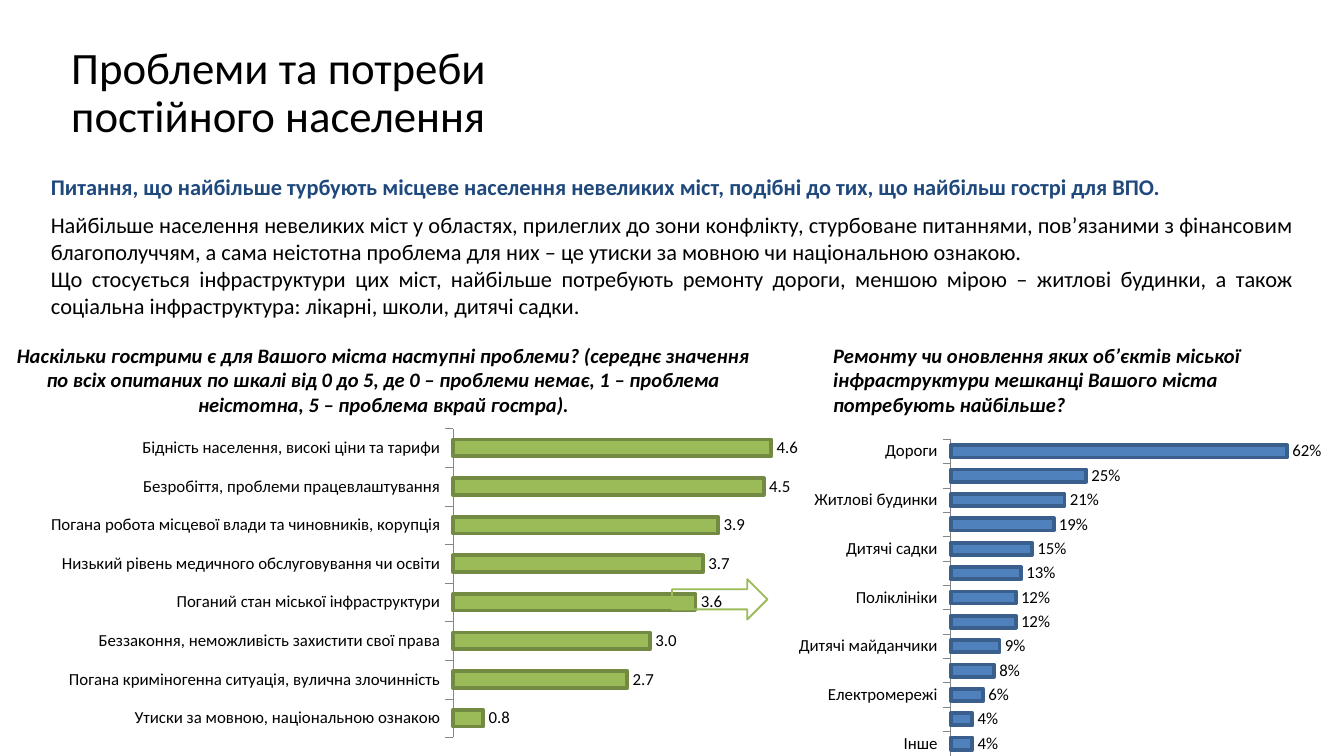
import pptx
import pptx.chart.data
import pptx.dml.color
import pptx.enum.chart
import pptx.enum.shapes
import pptx.enum.text
import pptx.oxml
import pptx.oxml.ns
import pptx.util

Inches, Pt = pptx.util.Inches, pptx.util.Pt
RGBColor = pptx.dml.color.RGBColor
Align = pptx.enum.text.PP_ALIGN

BLACK = RGBColor(0, 0, 0)
NAVY = RGBColor(0x1F, 0x49, 0x7D)
GREEN = RGBColor(0x9B, 0xBB, 0x59)
OLIVE = RGBColor(0x73, 0x8A, 0x42)
BLUE = RGBColor(0x4F, 0x81, 0xBD)
STEEL = RGBColor(0x3A, 0x5F, 0x8C)
GRAY = RGBColor(0x86, 0x86, 0x86)
FACE = "Calibri"

ISSUES = {
    "Бідність населення, високі ціни та тарифи": 4.6,
    "Безробіття, проблеми працевлаштування": 4.5,
    "Погана робота місцевої влади та чиновників, корупція": 3.9,
    "Низький рівень медичного обслуговування чи освіти": 3.7,
    "Поганий стан міської інфраструктури": 3.6,
    "Беззаконня, неможливість захистити свої права": 3.0,
    "Погана криміногенна ситуація, вулична злочинність": 2.7,
    "Утиски за мовною, національною ознакою": 0.8,
}
REPAIRS = {
    "Дороги": 0.62,
    "Лікарні": 0.25,
    "Житлові будинки": 0.21,
    "Школи": 0.19,
    "Дитячі садки": 0.15,
    "Водогін": 0.13,
    "Поліклініки": 0.12,
    "Громадський транспорт": 0.12,
    "Дитячі майданчики": 0.09,
    "Система централізованого опалення": 0.08,
    "Електромережі": 0.06,
    "Газопровід": 0.04,
    "Інше": 0.04,
}
TITLE = "Проблеми та потреби \vпостійного населення"
LEAD = ("Питання, що найбільше турбують місцеве населення невеликих міст, "
        "подібні до тих, що найбільш гострі для ВПО.")
MONEY = ("Найбільше населення невеликих міст у областях, прилеглих до зони "
         "конфлікту, стурбоване питаннями, пов’язаними з фінансовим "
         "благополуччям, а сама неістотна проблема для них – це утиски за "
         "мовною чи національною ознакою.")
WORKS = ("Що стосується інфраструктури цих міст, найбільше потребують ремонту "
         "дороги, меншою мірою – житлові будинки, а також соціальна "
         "інфраструктура: лікарні, школи, дитячі садки.")
ASK_LEFT = ("Наскільки гострими є для Вашого міста наступні проблеми? (середнє "
            "значення по всіх опитаних по шкалі від 0 до 5, де 0 – проблеми "
            "немає, 1 – проблема неістотна, 5 – проблема вкрай гостра).")
ASK_RIGHT = ("Ремонту чи оновлення яких об’єктів міської інфраструктури "
             "мешканці Вашого міста потребують найбільше?")


def style(para, size, color=BLACK, bold=False, italic=False):
    for run in para.runs:
        font = run.font
        font.name, font.size = FACE, Pt(size)
        font.bold, font.italic = bold, italic
        font.color.rgb = color


def add_title(slide):
    title = slide.shapes.title
    title.left, title.top = Inches(0.43), Inches(0.29)
    title.width, title.height = Inches(9), Inches(0.57)
    frame = title.text_frame
    frame.text = TITLE
    frame.auto_size = pptx.enum.text.MSO_AUTO_SIZE.NONE
    frame.vertical_anchor = pptx.enum.text.MSO_ANCHOR.TOP
    para = frame.paragraphs[0]
    para.alignment = Align.LEFT
    para.line_spacing = 0.9
    style(para, 24)


def add_box(slide, box, lines, align):
    frame = slide.shapes.add_textbox(*map(Inches, box)).text_frame
    frame.word_wrap = True
    frame.text = "\n".join(lines)
    for para in frame.paragraphs:
        para.alignment = align
    return frame.paragraphs


def add_ask(slide, box, text, align):
    style(add_box(slide, box, [text], align)[0], 11, bold=True, italic=True)


def set_plot(chart, plot):
    """Fix the inner plot area as fractions of the chart."""
    area = chart._chartSpace.chart.plotArea
    for old in area.findall(pptx.oxml.ns.qn("c:layout")):
        area.remove(old)
    sizes = "".join(f'<c:{tag} val="{val}"/>' for tag, val in zip("xywh", plot))
    area.insert(0, pptx.oxml.parse_xml(
        f'<c:layout {pptx.oxml.ns.nsdecls("c")}><c:manualLayout>'
        '<c:layoutTarget val="inner"/><c:xMode val="edge"/>'
        f'<c:yMode val="edge"/>{sizes}</c:manualLayout></c:layout>'))


def add_bars(slide, box, data, low, high, gap, form, fill, edge, plot):
    kinds = pptx.enum.chart
    source = pptx.chart.data.CategoryChartData(number_format=form)
    source.categories = list(data)
    source.add_series("Series 1", list(data.values()))
    chart = slide.shapes.add_chart(
        kinds.XL_CHART_TYPE.BAR_CLUSTERED, *map(Inches, box), source).chart
    chart.has_legend = chart.has_title = False
    chart.font.name, chart.font.size = FACE, Pt(9)
    chart.font.color.rgb = BLACK

    # Axes
    cats, vals = chart.category_axis, chart.value_axis
    cats.reverse_order = True
    cats.major_tick_mark = kinds.XL_TICK_MARK.OUTSIDE
    cats.format.line.color.rgb = GRAY
    cats.format.line.width = Pt(0.25)
    vals.visible = vals.has_major_gridlines = False
    vals.minimum_scale, vals.maximum_scale = low, high

    # Bars and labels
    bars = chart.plots[0]
    bars.gap_width = gap
    bars.vary_by_categories = False
    look = bars.series[0].format
    look.fill.solid()
    look.fill.fore_color.rgb = fill
    look.line.color.rgb = edge
    look.line.width = Pt(2)
    bars.has_data_labels = True
    labels = bars.data_labels
    labels.show_value = True
    labels.number_format = form
    labels.number_format_is_linked = False
    labels.position = kinds.XL_LABEL_POSITION.OUTSIDE_END
    set_plot(chart, plot)


def add_arrow(slide, box):
    arrow = slide.shapes.add_shape(
        pptx.enum.shapes.MSO_SHAPE.RIGHT_ARROW, *map(Inches, box))
    arrow.shadow.inherit = False
    arrow.fill.background()
    arrow.line.color.rgb = GREEN
    arrow.line.width = Pt(1)


def main():
    # Widescreen page, 16 to 9
    deck = pptx.Presentation()
    deck.slide_width = Inches(10)
    deck.slide_height = Inches(10) * 9 // 16
    slide = deck.slides.add_slide(deck.slide_layouts[5])
    add_title(slide)

    # Left chart, its question and the arrow to the right chart
    add_bars(slide, (0, 3.05, 6.3, 2.58), ISSUES, 0.4, 4.9, 132, "#,##0.0",
             GREEN, OLIVE, (0.535, 0.054, 0.403, 0.891))
    add_ask(slide, (0, 2.5, 5.71, 0.66), ASK_LEFT, Align.CENTER)
    add_arrow(slide, (5, 4.31, 0.71, 0.3))

    # Right chart and its question
    add_bars(slide, (5.47, 3.21, 4.53, 2.42), REPAIRS, 0, 0.7, 100, "0%",
             BLUE, STEEL, (0.354, 0.024, 0.624, 0.974))
    add_ask(slide, (6.1, 2.5, 3.9, 0.66), ASK_RIGHT, Align.LEFT)

    # Summary
    lead, money, works = add_box(
        slide, (0.28, 1.24, 9.45, 1.24), [LEAD, MONEY, WORKS], Align.JUSTIFY)
    style(lead, 12, NAVY, bold=True)
    style(money, 12)
    style(works, 12)
    money.space_before = Pt(6)

    deck.save("out.pptx")


if __name__ == "__main__":
    main()
